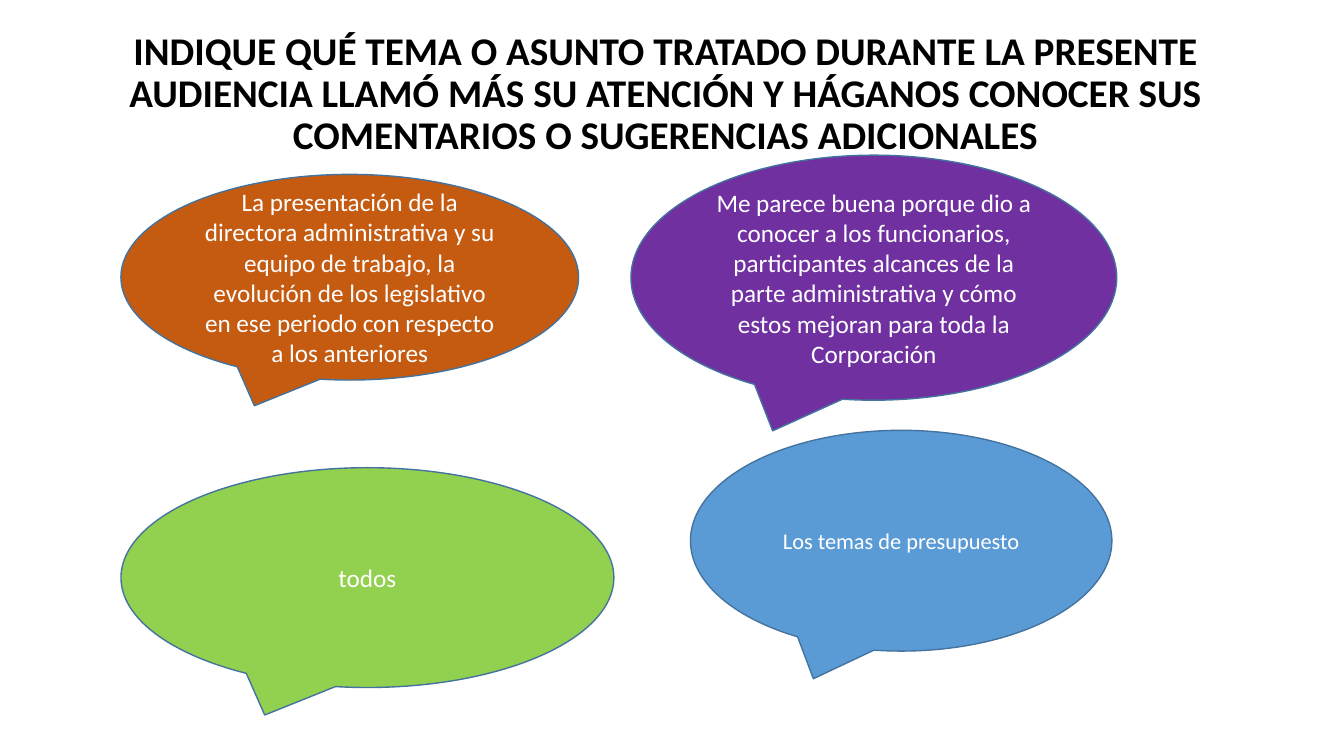
import dataclasses

import pptx
import pptx.dml.color
import pptx.enum.shapes
import pptx.enum.text
import pptx.util

Pt = pptx.util.Pt
ANCHOR = pptx.enum.text.MSO_ANCHOR
COLORS = {
    "black": "000000",
    "white": "FFFFFF",
    "outline": "43739E",
    "orange": "C55A11",
    "purple": "7030A0",
    "green": "92D050",
    "blue": "5B9BD5",
}
TITLE = (
    "INDIQUE QUÉ TEMA O ASUNTO TRATADO DURANTE LA PRESENTE AUDIENCIA LLAMÓ "
    "MÁS SU ATENCIÓN Y HÁGANOS CONOCER SUS COMENTARIOS O SUGERENCIAS ADICIONALES"
)


@dataclasses.dataclass
class Bubble:
    left: float
    top: float
    width: float
    height: float
    fill: str
    text: str
    size: float = 18


BUBBLES = [
    Bubble(86.4, 124.6, 326.9, 146.9, "orange",
           "La presentación de la directora administrativa y su equipo de trabajo, "
           "la evolución de los legislativo en ese periodo con respecto a los anteriores"),
    Bubble(450.7, 110.9, 347, 175, "purple",
           "Me parece buena porque dio a conocer a los funcionarios, participantes "
           "alcances de la parte administrativa y cómo estos mejoran para toda la Corporación"),
    Bubble(86.4, 334.1, 352.1, 157, "green", "todos"),
    Bubble(493.2, 307.4, 301, 157.7, "blue", "Los temas de presupuesto", 16),
]


def rgb(name: str) -> pptx.dml.color.RGBColor:
    return pptx.dml.color.RGBColor.from_string(COLORS[name])


def write_text(sp, text: str, *, size: float, color: str, bold: bool = False,
               anchor=ANCHOR.MIDDLE, spacing: float = 1.0) -> None:
    tf = sp.text_frame
    tf.word_wrap = True
    tf.vertical_anchor = anchor
    p = tf.paragraphs[0]
    p.alignment = pptx.enum.text.PP_ALIGN.CENTER
    p.line_spacing = spacing
    r = p.add_run()
    r.text = text
    r.font.name = "Calibri"
    r.font.size = Pt(size)
    r.font.bold = bold
    r.font.color.rgb = rgb(color)


def draw_bubble(slide, bubble: Bubble) -> None:
    sp = slide.shapes.add_shape(
        pptx.enum.shapes.MSO_SHAPE.OVAL_CALLOUT,
        Pt(bubble.left), Pt(bubble.top), Pt(bubble.width), Pt(bubble.height))
    sp.shadow.inherit = False
    sp.fill.solid()
    sp.fill.fore_color.rgb = rgb(bubble.fill)
    sp.line.color.rgb = rgb("outline")
    sp.line.width = Pt(1)
    write_text(sp, bubble.text, size=bubble.size, color="white")


def main() -> None:
    prs = pptx.Presentation()
    prs.slide_width = Pt(960)
    prs.slide_height = Pt(540)
    slide = prs.slides.add_slide(prs.slide_layouts[6])
    title = slide.shapes.add_textbox(Pt(61.2), Pt(38.9), Pt(828), Pt(77.8))
    write_text(title, TITLE, size=28, color="black", bold=True,
               anchor=ANCHOR.BOTTOM, spacing=0.9)
    for bubble in BUBBLES:
        draw_bubble(slide, bubble)
    prs.save("out.pptx")


if __name__ == "__main__":
    main()
